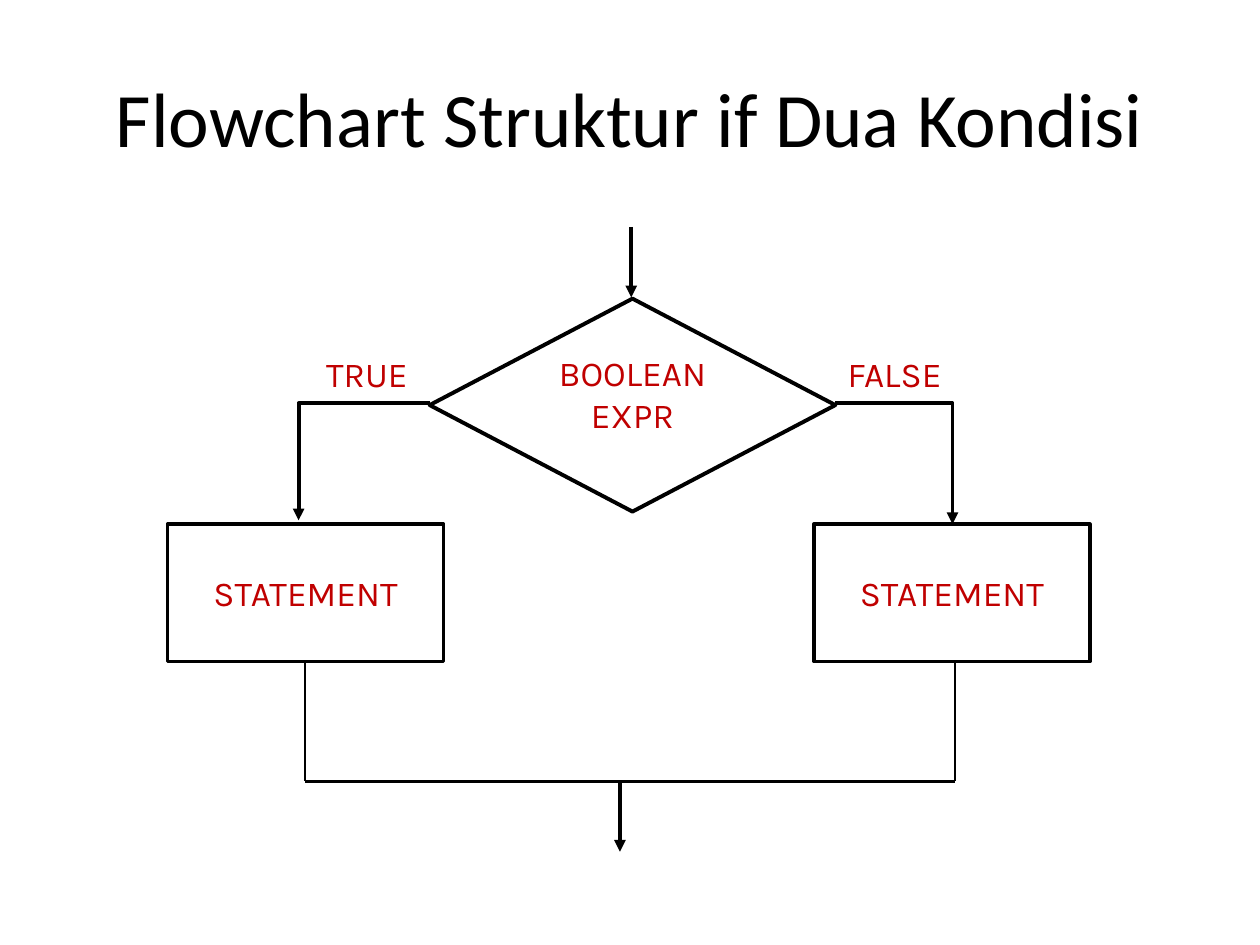
from dataclasses import dataclass

from lxml import etree
from pptx import Presentation
from pptx.dml.color import RGBColor
from pptx.enum.shapes import MSO_CONNECTOR, MSO_SHAPE
from pptx.enum.text import MSO_ANCHOR, PP_ALIGN
from pptx.oxml.ns import qn
from pptx.util import Pt

PX = 9144
STRAIGHT = MSO_CONNECTOR.STRAIGHT
DECISION, RECT = MSO_SHAPE.FLOWCHART_DECISION, MSO_SHAPE.RECTANGLE
TOP, MIDDLE = MSO_ANCHOR.TOP, MSO_ANCHOR.MIDDLE
LEFT, CENTER = PP_ALIGN.LEFT, PP_ALIGN.CENTER


@dataclass(frozen=True)
class Theme:
    ink: RGBColor = RGBColor(0, 0, 0)
    paper: RGBColor = RGBColor(255, 255, 255)
    accent: RGBColor = RGBColor(0xC0, 0, 0)
    title_font: str = "Calibri"
    label_font: str = "Karla"
    title_size: int = 44
    label_size: int = 20
    thin: float = 1.5
    medium: float = 2
    thick: float = 2.25


class Flowchart:
    def __init__(self, slide, theme):
        self.slide = slide
        self.theme = theme

    def set_text(self, sp, text, font, size, color, align, anchor):
        tf = sp.text_frame
        tf.word_wrap = True
        tf.vertical_anchor = anchor
        tf.text = text
        p = tf.paragraphs[0]
        p.alignment = align
        r = p.runs[0]
        r.font.name = font
        r.font.size = Pt(size)
        r.font.color.rgb = color

    def set_label(self, sp, text, align, anchor):
        t = self.theme
        self.set_text(sp, text, t.label_font, t.label_size, t.accent, align, anchor)

    def stroke(self, sp, width, arrow=False):
        sp.line.color.rgb = self.theme.ink
        sp.line.width = Pt(width)
        if arrow:
            ln = sp.line._get_or_add_ln()
            etree.SubElement(ln, qn("a:tailEnd"), type="triangle")

    def textbox(self, x, y, w, h):
        return self.slide.shapes.add_textbox(x * PX, y * PX, w * PX, h * PX)

    def title(self, text, x, y, w, h):
        t = self.theme
        self.set_text(self.textbox(x, y, w, h), text, t.title_font,
                      t.title_size, t.ink, CENTER, MIDDLE)

    def label(self, text, x, y, w, h):
        self.set_label(self.textbox(x, y, w, h), text, LEFT, TOP)

    def shape(self, kind, x, y, w, h, width):
        sp = self.slide.shapes.add_shape(kind, x * PX, y * PX, w * PX, h * PX)
        sp.shadow.inherit = False
        self.stroke(sp, width)
        return sp

    def decision(self, text, x, y, w, h):
        sp = self.shape(DECISION, x, y, w, h, self.theme.thick)
        sp.fill.solid()
        sp.fill.fore_color.rgb = self.theme.paper
        tf = sp.text_frame
        tf.margin_left = tf.margin_right = tf.margin_top = tf.margin_bottom = 0
        self.set_label(sp, text, CENTER, TOP)

    def process(self, text, x, y, w, h):
        sp = self.shape(RECT, x, y, w, h, self.theme.medium)
        sp.fill.background()
        self.set_label(sp, text, CENTER, MIDDLE)

    def line(self, x1, y1, x2, y2, arrow=False):
        sp = self.slide.shapes.add_connector(
            STRAIGHT, x1 * PX, y1 * PX, x2 * PX, y2 * PX)
        self.stroke(sp, self.theme.thick if arrow else self.theme.thin, arrow)
        etree.SubElement(sp._element.spPr, qn("a:effectLst"))

    def branch(self, x1, y1, x2, y2):
        builder = self.slide.shapes.build_freeform(x1, y1, scale=PX)
        builder.add_line_segments([(x2, y1), (x2, y2)], close=False)
        sp = builder.convert_to_shape()
        sp.shadow.inherit = False
        sp.fill.background()
        self.stroke(sp, self.theme.thick, arrow=True)


def main():
    prs = Presentation()
    prs.slide_width, prs.slide_height = 1000 * PX, 750 * PX
    s = prs.slides.add_slide(prs.slide_layouts[6])
    chart = Flowchart(s, Theme())

    chart.title("Flowchart Struktur if Dua Kondisi", 50, 30, 900, 125)
    chart.decision("BOOLEAN EXPR", 341, 237, 322, 169)
    chart.line(501, 180, 501, 236, arrow=True)

    join_y = 620
    for text, label_x, corner_x, drop_x, tip_y, box_x, exit_x in (
        ("TRUE", 249, 341, 237, 413, 133, 242),
        ("FALSE", 663, 663, 756, 416, 646, 758),
    ):
        chart.branch(corner_x, 320, drop_x, tip_y)
        chart.label(text, label_x, 275, 107, 56)
        chart.process("STATEMENT", box_x, 416, 219, 109)
        chart.line(exit_x, 525, exit_x, join_y)

    chart.line(242, join_y, 758, join_y)
    chart.line(492, join_y, 492, 676, arrow=True)
    prs.save("out.pptx")


if __name__ == "__main__":
    main()
